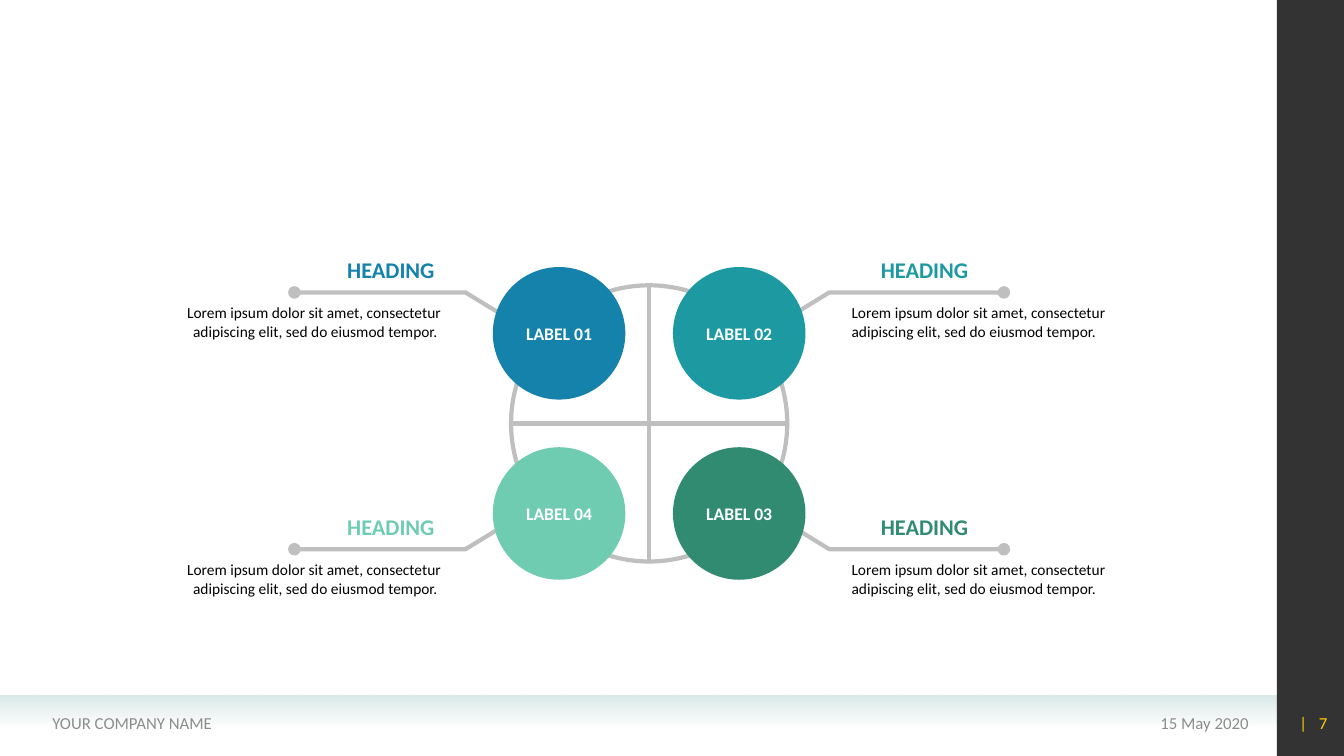
"""Build a slide with four labelled discs on a ring and a callout for each."""
from dataclasses import dataclass
from typing import Any

from lxml.etree import SubElement
from pptx import Presentation
from pptx.dml.color import RGBColor
from pptx.enum.shapes import MSO_CONNECTOR, MSO_SHAPE
from pptx.enum.text import MSO_ANCHOR, PP_ALIGN
from pptx.oxml.ns import qn
from pptx.util import Cm, Pt

BLUE = RGBColor(0x14, 0x82, 0xAB)
TEAL = RGBColor(0x1D, 0x9A, 0xA1)
GREEN = RGBColor(0x31, 0x8B, 0x71)
MINT = RGBColor(0x70, 0xCC, 0xB1)
GREY = RGBColor(0xBF, 0xBF, 0xBF)
FOOTER_GREY = RGBColor(0x8C, 0x8C, 0x8C)
YELLOW = RGBColor(0xFF, 0xCC, 0x00)
PALE = RGBColor(0xD9, 0xE9, 0xE8)
BLACK = RGBColor(0, 0, 0)
WHITE = RGBColor(0xFF, 0xFF, 0xFF)

CENTRE_X, CENTRE_Y = 16.36, 10.67
RING_RADIUS = 3.48
DISC_RADIUS = 1.67
DISC_OFFSET = 2.27
ELBOW_RISE = 0.67
DESCRIPTION = "Lorem ipsum dolor sit amet, consectetur adipiscing elit, sed do eiusmod tempor."

FOOTER_FONT = {"name": "Calibri", "size": Pt(12)}
LABEL_FONT = {"name": "Calibri", "size": Pt(12.6), "bold": True}
HEADING_FONT = {"name": "Calibri", "size": Pt(16), "bold": True}
DESCRIPTION_FONT = {"name": "Calibri", "size": Pt(11)}
DESCRIPTION_SPACING = {"line_spacing": Pt(13.8), "space_before": Pt(2.2)}
TIGHT_MARGINS = {
    "margin_left": Cm(0.1), "margin_right": Cm(0.1),
    "margin_top": Cm(0.05), "margin_bottom": Cm(0.05),
}


@dataclass(frozen=True)
class Box:
    left: float
    top: float
    width: float
    height: float

    def lengths(self) -> tuple[Cm, Cm, Cm, Cm]:
        return Cm(self.left), Cm(self.top), Cm(self.width), Cm(self.height)


@dataclass(frozen=True)
class Side:
    direction: int
    align: PP_ALIGN
    inner: float
    elbow: float
    end: float
    heading_left: float
    heading_width: float
    description_left: float
    description_width: float
    description: str


@dataclass(frozen=True)
class Row:
    direction: int
    line_y: float


@dataclass(frozen=True)
class Topic:
    label: str
    color: RGBColor
    side: Side
    row: Row


@dataclass(frozen=True)
class FooterItem:
    text: str
    left: float
    width: float
    align: PP_ALIGN
    color: RGBColor


LEFT = Side(-1, PP_ALIGN.RIGHT, 12.83, 11.73, 7.42, 3.02, 8.18, 3.02, 8.2, DESCRIPTION + " ")
RIGHT = Side(1, PP_ALIGN.LEFT, 19.81, 20.9, 25.3, 21.95, 8.33, 21.36, 7.59, DESCRIPTION)
UPPER = Row(-1, 7.37)
LOWER = Row(1, 13.84)
TOPICS = (
    Topic("LABEL 01", BLUE, LEFT, UPPER),
    Topic("LABEL 02", TEAL, RIGHT, UPPER),
    Topic("LABEL 04", MINT, LEFT, LOWER),
    Topic("LABEL 03", GREEN, RIGHT, LOWER),
)
FOOTER = (
    FooterItem("15 May 2020", 23.11, 8.61, PP_ALIGN.RIGHT, FOOTER_GREY),
    FooterItem("YOUR COMPANY NAME", 1.07, 12.45, PP_ALIGN.LEFT, FOOTER_GREY),
    FooterItem("|", 32.2, 0.99, PP_ALIGN.RIGHT, YELLOW),
    FooterItem("7", 32.7, 1.0, PP_ALIGN.RIGHT, YELLOW),
)


def apply(target: Any, values: dict[str, Any]) -> None:
    for attribute, value in values.items():
        setattr(target, attribute, value)


def write(shape: Any, text: str, color: RGBColor, font: dict, frame: dict, paragraph: dict) -> None:
    apply(shape.text_frame, {"word_wrap": True, **frame})
    line = shape.text_frame.paragraphs[0]
    apply(line, paragraph)
    run = line.add_run()
    run.text = text
    apply(run.font, font)
    run.font.color.rgb = color


def add_text(shapes: Any, box: Box, text: str, color: RGBColor,
             font: dict, frame: dict, paragraph: dict) -> None:
    write(shapes.add_textbox(*box.lengths()), text, color, font, frame, paragraph)


def add_plain(shapes: Any, preset: MSO_SHAPE, box: Box) -> Any:
    shape = shapes.add_shape(preset, *box.lengths())
    shape.shadow.inherit = False
    shape.line.fill.background()
    return shape


def stroke(shape: Any) -> None:
    shape.line.color.rgb = GREY
    shape.line.width = Pt(3)


def set_alpha(color_element: Any, percent: int) -> None:
    SubElement(color_element, qn("a:alpha"), val=str(percent * 1000))


def circle(x: float, y: float, radius: float) -> Box:
    return Box(x - radius, y - radius, 2 * radius, 2 * radius)


def add_frame(shapes: Any) -> None:
    band = add_plain(shapes, MSO_SHAPE.RECTANGLE, Box(0, 17.52, 32.18, 0.79))
    band.fill.gradient()
    band.fill.gradient_angle = 270
    for stop, position in zip(band.fill.gradient_stops, (0, 1)):
        apply(stop, {"position": position})
        stop.color.rgb = PALE
    set_alpha(band.element.findall(".//" + qn("a:gs"))[1][0], 0)
    rail = add_plain(shapes, MSO_SHAPE.RECTANGLE, Box(32.18, 0, 1.69, 19.05))
    rail.fill.solid()
    rail.fill.fore_color.rgb = BLACK
    set_alpha(rail.element.spPr.find(qn("a:solidFill"))[0], 80)
    for item in FOOTER:
        add_text(shapes, Box(item.left, 17.7, item.width, 1.02), item.text, item.color,
                 FOOTER_FONT, {"vertical_anchor": MSO_ANCHOR.MIDDLE}, {"alignment": item.align})


def add_callout_line(shapes: Any, side: Side, row: Row) -> None:
    builder = shapes.build_freeform(Cm(side.inner), Cm(row.line_y - row.direction * ELBOW_RISE))
    points = [(Cm(x), Cm(row.line_y)) for x in (side.elbow, side.end)]
    builder.add_line_segments(points, close=False)
    callout = builder.convert_to_shape()
    callout.shadow.inherit = False
    callout.fill.background()
    stroke(callout)
    SubElement(callout.element.spPr.find(qn("a:ln")), qn("a:tailEnd"), type="oval")


def add_ring(shapes: Any) -> None:
    ring = add_plain(shapes, MSO_SHAPE.OVAL, circle(CENTRE_X, CENTRE_Y, RING_RADIUS))
    ring.fill.background()
    stroke(ring)
    for dx, dy in ((0, RING_RADIUS), (RING_RADIUS, 0)):
        spoke = shapes.add_connector(MSO_CONNECTOR.STRAIGHT, Cm(CENTRE_X - dx), Cm(CENTRE_Y - dy),
                                     Cm(CENTRE_X + dx), Cm(CENTRE_Y + dy))
        stroke(spoke)
        SubElement(spoke.element.spPr, qn("a:effectLst"))


def add_topic(shapes: Any, topic: Topic) -> None:
    side, row = topic.side, topic.row
    disc = add_plain(shapes, MSO_SHAPE.OVAL, circle(
        CENTRE_X + side.direction * DISC_OFFSET, CENTRE_Y + row.direction * DISC_OFFSET, DISC_RADIUS))
    disc.fill.solid()
    disc.fill.fore_color.rgb = topic.color
    write(disc, topic.label, WHITE, LABEL_FONT,
          {"vertical_anchor": MSO_ANCHOR.MIDDLE, "word_wrap": False}, {"alignment": PP_ALIGN.CENTER})
    add_text(shapes, Box(side.heading_left, row.line_y - 1.05, side.heading_width, 0.94),
             "HEADING", topic.color, HEADING_FONT,
             {"vertical_anchor": MSO_ANCHOR.BOTTOM}, {"alignment": side.align})
    add_text(shapes, Box(side.description_left, row.line_y + 0.2, side.description_width, 1.07),
             side.description, BLACK, DESCRIPTION_FONT, TIGHT_MARGINS,
             {"alignment": side.align, **DESCRIPTION_SPACING})


def main() -> None:
    deck = Presentation()
    apply(deck, {"slide_width": Cm(33.87), "slide_height": Cm(19.05)})
    shapes = deck.slides.add_slide(deck.slide_layouts[6]).shapes
    add_frame(shapes)
    for topic in TOPICS:
        add_callout_line(shapes, topic.side, topic.row)
    add_ring(shapes)
    for topic in TOPICS:
        add_topic(shapes, topic)
    deck.save("out.pptx")


if __name__ == "__main__":
    main()
